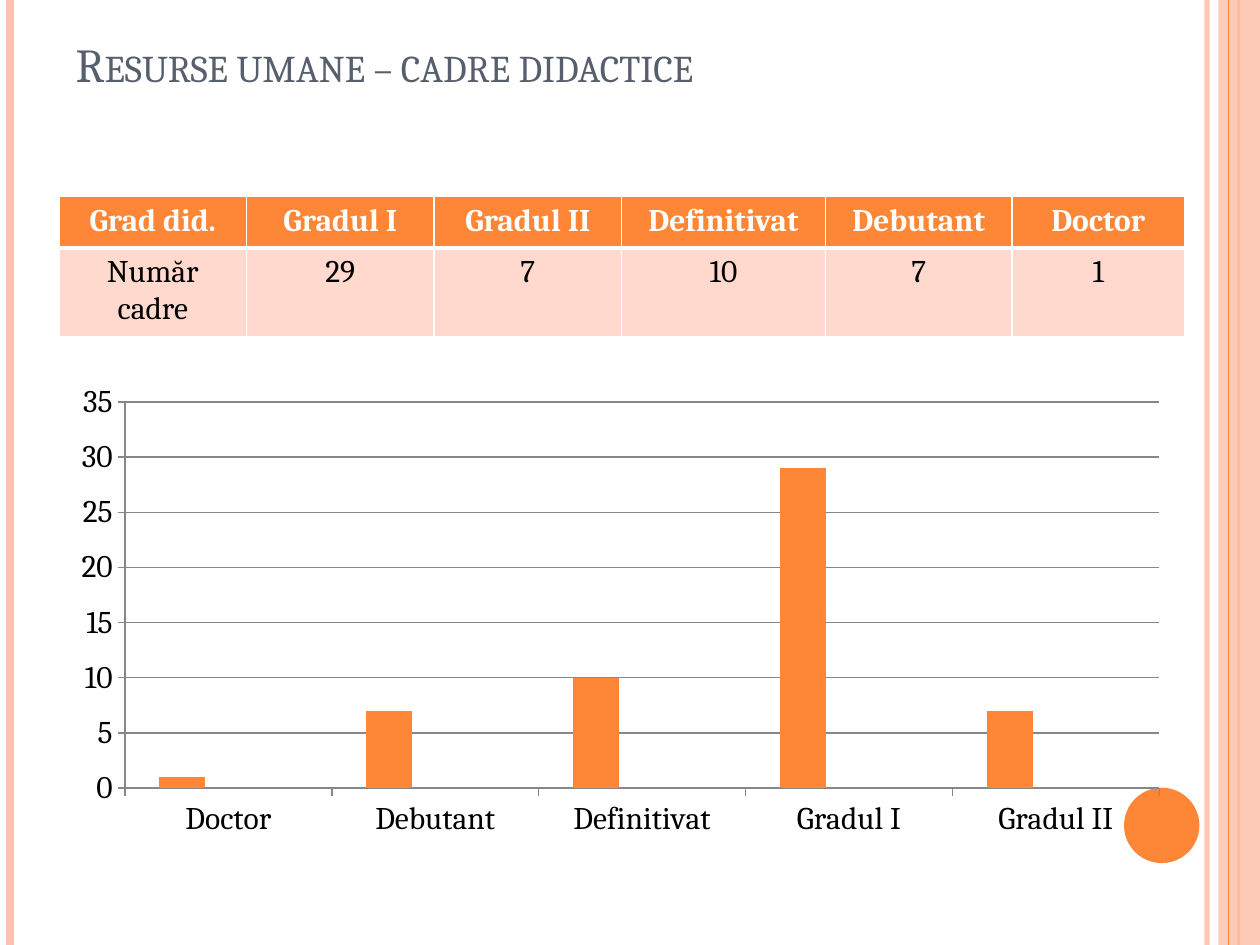
import pptx
import pptx.chart.data
import pptx.dml.color
import pptx.enum.chart
import pptx.enum.shapes
import pptx.enum.text
import pptx.oxml
import pptx.oxml.ns
import pptx.util
from pptx.util import Cm, Pt

TITLE = "Resurse umane – cadre didactice"
STAFF = [
    ["Grad did.", "Gradul I", "Gradul II", "Definitivat", "Debutant", "Doctor"],
    ["Număr cadre", "29", "7", "10", "7", "1"],
]
COLUMN_WIDTHS = [3.78, 3.78, 3.78, 4.11, 3.76, 3.48]
ROW_HEIGHTS = [1.04, 1.78]
GRADES = ["Doctor", "Debutant", "Definitivat", "Gradul I", "Gradul II"]
SERIES = [
    ("Series 1", [1, 7, 10, 29, 7], "orange"),
    ("Series 2", [None] * 5, "blue"),
    ("Series 3", [None] * 5, "red"),
]
COLORS = {
    "orange": "FE8637", "peach": "FEC3AE", "pale": "FFD9CE", "slate": "575F6D",
    "blue": "7598D9", "red": "B32C16", "grid": "878787",
    "white": "FFFFFF", "black": "000000",
}
FONT = "Cambria"
SLIDE_WIDTH, SLIDE_HEIGHT = 25.4, 19.05
ALIGN = pptx.enum.text.PP_ALIGN


def rgb(color):
    return pptx.dml.color.RGBColor.from_string(COLORS[color])


def paint(fill, color):
    fill.solid()
    fill.fore_color.rgb = rgb(color)


def add_xml(parent, xml):
    element = pptx.oxml.parse_xml(xml.replace("/>", f" {pptx.oxml.ns.nsdecls('a')}/>", 1)
                                  if xml.endswith("/>") and xml.count("<") == 1
                                  else xml.replace(">", f" {pptx.oxml.ns.nsdecls('a')}>", 1))
    parent.append(element)
    return element


def set_opacity(fill_parent, percent):
    for color in fill_parent.iter(pptx.oxml.ns.qn("a:srgbClr")):
        add_xml(color, f'<a:alpha val="{percent * 1000}"/>')


def write(frame, text, size=18, color="black", bold=False, align=ALIGN.CENTER,
          small_caps=False):
    paragraph = frame.paragraphs[0]
    paragraph.alignment = align
    run = paragraph.add_run()
    run.text = text
    run.font.name, run.font.size, run.font.bold = FONT, Pt(size), bold
    run.font.color.rgb = rgb(color)
    if small_caps:
        run.font._element.set("cap", "small")


def add_stripe(slide, x, color, width, opacity=100):
    """Draw a vertical line over the full slide height."""
    stripe = slide.shapes.add_connector(
        pptx.enum.shapes.MSO_CONNECTOR.STRAIGHT, Cm(x), 0, Cm(x), Cm(SLIDE_HEIGHT))
    stripe.line.color.rgb = rgb(color)
    stripe.line.width = Pt(width)
    properties = stripe._element.spPr
    if opacity < 100:
        set_opacity(properties, opacity)
    add_xml(properties, "<a:effectLst/>")


def add_block(slide, kind, left, top, width, height, color, opacity=100):
    block = slide.shapes.add_shape(kind, Cm(left), Cm(top), Cm(width), Cm(height))
    block.shadow.inherit = False
    paint(block.fill, color)
    block.line.fill.background()
    if opacity < 100:
        set_opacity(block._element.spPr, opacity)


def add_decoration(slide):
    shapes = pptx.enum.shapes.MSO_SHAPE
    add_stripe(slide, 24.33, "peach", 3, opacity=93)
    add_stripe(slide, 0.2, "peach", 4.5)
    add_stripe(slide, 24.97, "orange", 1.5)
    add_block(slide, shapes.RECTANGLE, 24.56, 0, SLIDE_WIDTH - 24.56, SLIDE_HEIGHT,
              "peach", opacity=87)
    add_stripe(slide, 24.76, "orange", 0.75)
    add_block(slide, shapes.OVAL, 22.66, 15.88, 1.52, 1.52, "orange")


def add_title(slide):
    title = slide.shapes.title
    title.left, title.top, title.width, title.height = Cm(1.27), Cm(0.76), Cm(22.56), Cm(1.22)
    title.text_frame.vertical_anchor = pptx.enum.text.MSO_ANCHOR.BOTTOM
    title.text_frame.auto_size = pptx.enum.text.MSO_AUTO_SIZE.NONE
    write(title.text_frame, TITLE, size=27, color="slate", align=ALIGN.LEFT, small_caps=True)


def set_borders(cell, widths):
    """Put white borders on a cell; they must come before its fill in the XML."""
    properties = cell._tc.get_or_add_tcPr()
    for side, width in widths.items():
        add_xml(properties, f'<a:ln{side} w="{Pt(width)}"><a:solidFill>'
                            f'<a:srgbClr val="{COLORS["white"]}"/></a:solidFill></a:ln{side}>')


def add_staff_table(slide):
    table = slide.shapes.add_table(
        len(STAFF), len(COLUMN_WIDTHS), Cm(1.19), Cm(3.96),
        Cm(sum(COLUMN_WIDTHS)), Cm(sum(ROW_HEIGHTS))).table
    for column, width in zip(table.columns, COLUMN_WIDTHS):
        column.width = Cm(width)
    for r, (row, height) in enumerate(zip(STAFF, ROW_HEIGHTS)):
        table.rows[r].height = Cm(height)
        header = r == 0
        for c, text in enumerate(row):
            cell = table.cell(r, c)
            write(cell.text_frame, text, color="white" if header else "black", bold=header)
            set_borders(cell, {"L": 1, "R": 1, "T": 1 if header else 3, "B": 3 if header else 1})
            paint(cell.fill, "orange" if header else "pale")


def add_grade_chart(slide):
    data = pptx.chart.data.CategoryChartData()
    data.categories = GRADES
    for name, values, _ in SERIES:
        data.add_series(name, values)
    chart = slide.shapes.add_chart(
        pptx.enum.chart.XL_CHART_TYPE.COLUMN_CLUSTERED,
        Cm(1.19), Cm(7.54), Cm(22.63), Cm(9.53), data).chart
    chart.has_legend = chart.has_title = False
    chart.font.name, chart.font.size = FONT, Pt(18)
    chart.font.color.rgb = rgb("black")
    plot = chart.plots[0]
    plot.gap_width, plot.overlap, plot.vary_by_categories = 150, 0, False
    for series, (_, _, color) in zip(plot.series, SERIES):
        paint(series.format.fill, color)
    scale = chart.value_axis
    scale.minimum_scale, scale.maximum_scale, scale.major_unit = 0, 35, 5
    scale.has_major_gridlines = True
    for line in (scale.major_gridlines.format.line, scale.format.line,
                 chart.category_axis.format.line):
        line.color.rgb = rgb("grid")
        line.width = Pt(0.75)
    for axis in (scale, chart.category_axis):
        axis.major_tick_mark = pptx.enum.chart.XL_TICK_MARK.OUTSIDE


def main():
    deck = pptx.Presentation()
    deck.slide_width, deck.slide_height = Cm(SLIDE_WIDTH), Cm(SLIDE_HEIGHT)
    slide = deck.slides.add_slide(deck.slide_layouts[5])
    paint(slide.background.fill, "white")
    add_decoration(slide)
    add_title(slide)
    add_staff_table(slide)
    add_grade_chart(slide)
    deck.save("out.pptx")


if __name__ == "__main__":
    main()
